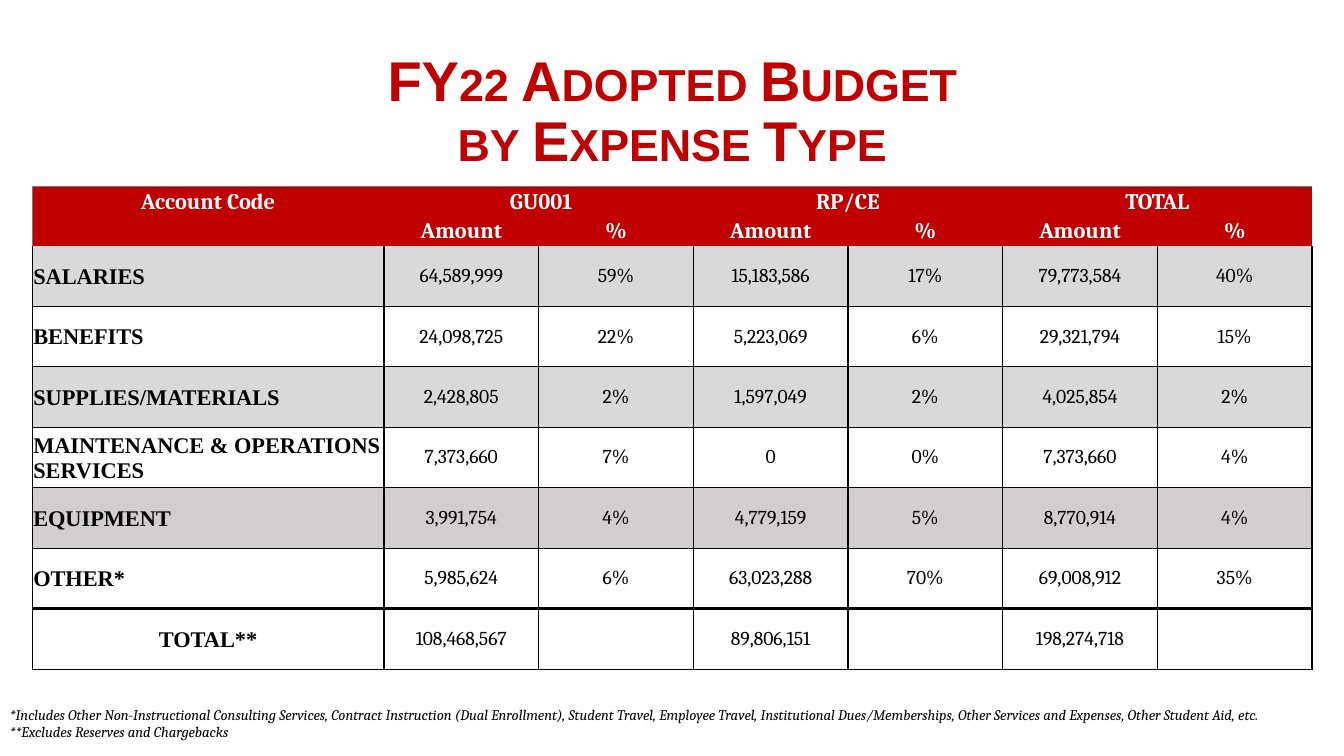
"""Build the FY22 adopted budget slide: a title, an expense table and footnotes."""
from dataclasses import dataclass

from lxml.etree import SubElement
from pptx import Presentation
from pptx.dml.color import RGBColor
from pptx.enum.text import MSO_ANCHOR, MSO_AUTO_SIZE, PP_ALIGN
from pptx.oxml.ns import qn
from pptx.util import Pt

TITLE = "FY22 Adopted Budget\vby Expense Type"
HEADS = [
    ["Account Code", " GU001", "", "RP/CE", "", "TOTAL", ""],
    ["", "Amount", "%", "Amount", "%", "Amount", "%"],
]
ROWS = [
    ["SALARIES", "64,589,999", "59%", "15,183,586", "17%", "79,773,584", "40%"],
    ["BENEFITS", "24,098,725", "22%", "5,223,069", "6%", "29,321,794", "15%"],
    ["SUPPLIES/MATERIALS", "2,428,805", "2%", "1,597,049", "2%", "4,025,854", "2%"],
    ["MAINTENANCE & OPERATIONS SERVICES", "7,373,660", "7%", "0", "0%", "7,373,660", "4%"],
    ["EQUIPMENT", "3,991,754", "4%", "4,779,159", "5%", "8,770,914", "4%"],
    ["OTHER*", "5,985,624", "6%", "63,023,288", "70%", "69,008,912", "35%"],
    ["TOTAL**", "108,468,567", "", "89,806,151", "", "198,274,718", ""],
]
NOTES = [
    "*Includes Other Non-Instructional Consulting Services, Contract Instruction "
    "(Dual Enrollment), Student Travel, Employee Travel, Institutional "
    "Dues/Memberships, Other Services and Expenses, Other Student Aid, etc.",
    "**Excludes Reserves and Chargebacks",
]


@dataclass(frozen=True)
class Theme:
    """Colours, fonts and type sizes."""
    red: str = "C00000"
    white: str = "FFFFFF"
    black: str = "000000"
    edge: str = "777C84"
    bands: tuple = ("D9D9D9", None, "D9D9D9", None, "D0CECE", None, None)
    sans: str = "Arial"
    serif: str = "Cambria"
    label: str = "Times New Roman"
    title: float = 40
    head: float = 16
    body: float = 14
    note: float = 10.5
    thin: float = 1
    thick: float = 2.25


T = Theme()
PX = 4572
WIDE, HIGH = 2667, 1500
LABEL, COL = 698, 307
HEAD, ROW = 59, 120
LAST = len(HEADS) + len(ROWS) - 1


def box(*sides):
    """Turn px lengths into EMU."""
    return [side * PX for side in sides]


def style(para, face, size, color, bold=False, italic=False, align=PP_ALIGN.LEFT):
    """Set the font and alignment of a paragraph."""
    font = para.font
    font.name, font.size = face, Pt(size)
    font.bold, font.italic = bold, italic
    font.color.rgb = RGBColor.from_string(color)
    para.alignment = align


def rule(cell, side, color, width):
    """Draw one cell border, or clear it when there is no colour."""
    line = SubElement(cell._tc.get_or_add_tcPr(), qn(f"a:ln{side}"), w=str(Pt(width)))
    if color:
        fill = SubElement(line, qn("a:solidFill"))
        SubElement(fill, qn("a:srgbClr"), val=color)
    else:
        SubElement(line, qn("a:noFill"))


def frame(cell, row, col):
    """Draw the four borders of a cell."""
    if row < len(HEADS):
        sides = {"L": T.edge if col == 0 else None, "R": None,
                 "T": T.edge if row == 0 else None, "B": None}
    else:
        sides = dict.fromkeys("LRTB", T.black)
        if row == len(HEADS):
            sides["T"] = None
    heavy = {(LAST - 1, "B"), (LAST, "T")}
    for side, color in sides.items():
        rule(cell, side, color, T.thick if (row, side) in heavy else T.thin)


def write(cell, text, row, col):
    """Fill one cell with its text, font, borders and colour."""
    head = row < len(HEADS)
    inset = PX * 2 if head or col == 0 else 0
    cell.margin_left = cell.margin_right = cell.margin_top = inset
    cell.margin_bottom = 0
    cell.vertical_anchor = MSO_ANCHOR.MIDDLE
    cell.text = text
    para = cell.text_frame.paragraphs[0]
    mid = PP_ALIGN.CENTER
    if head:
        style(para, T.serif, T.head, T.white, bold=True, align=mid)
    elif col == 0:
        style(para, T.label, T.head, T.black, bold=True,
              align=mid if row == LAST else PP_ALIGN.LEFT)
    else:
        style(para, T.serif, T.body, T.black, align=mid)
    frame(cell, row, col)
    fill = T.red if head else T.bands[row - len(HEADS)]
    if fill:
        cell.fill.solid()
        cell.fill.fore_color.rgb = RGBColor.from_string(fill)
    else:
        cell.fill.background()


def add_title(slide):
    """Place the title in small capitals."""
    title = slide.shapes.title
    title.left, title.top, title.width, title.height = box(184, 80, 2300, 290)
    text = title.text_frame
    text.vertical_anchor = MSO_ANCHOR.MIDDLE
    text.text = TITLE
    para = text.paragraphs[0]
    style(para, T.sans, T.title, T.red, bold=True, align=PP_ALIGN.CENTER)
    para.line_spacing = 0.9
    para._p.pPr.find(qn("a:defRPr")).set("cap", "small")


def add_budget(slide):
    """Place the expense table."""
    data = HEADS + ROWS
    highs = [HEAD] * len(HEADS) + [ROW] * len(ROWS)
    wides = [LABEL] + [COL] * (len(HEADS[0]) - 1)
    place = box(64, 370, sum(wides), sum(highs))
    table = slide.shapes.add_table(len(data), len(wides), *place).table
    table.first_row = table.horz_banding = False
    for col, wide in zip(table.columns, wides):
        col.width = wide * PX
    for row, high in zip(table.rows, highs):
        row.height = high * PX
    for row, texts in enumerate(data):
        for col, text in enumerate(texts):
            write(table.cell(row, col), text, row, col)
    for col in range(1, len(wides), 2):
        table.cell(0, col).merge(table.cell(0, col + 1))


def add_notes(slide):
    """Place the footnotes."""
    text = slide.shapes.add_textbox(*box(0, 1390, WIDE, 90)).text_frame
    text.word_wrap = True
    text.auto_size = MSO_AUTO_SIZE.SHAPE_TO_FIT_TEXT
    text.text = "\n".join(NOTES)
    for para in text.paragraphs:
        style(para, T.serif, T.note, T.black, italic=True)


def main():
    """Build and save the slide."""
    deck = Presentation()
    deck.slide_width, deck.slide_height = box(WIDE, HIGH)
    slide = deck.slides.add_slide(deck.slide_layouts[5])
    add_title(slide)
    add_budget(slide)
    add_notes(slide)
    deck.save("out.pptx")


if __name__ == "__main__":
    main()
